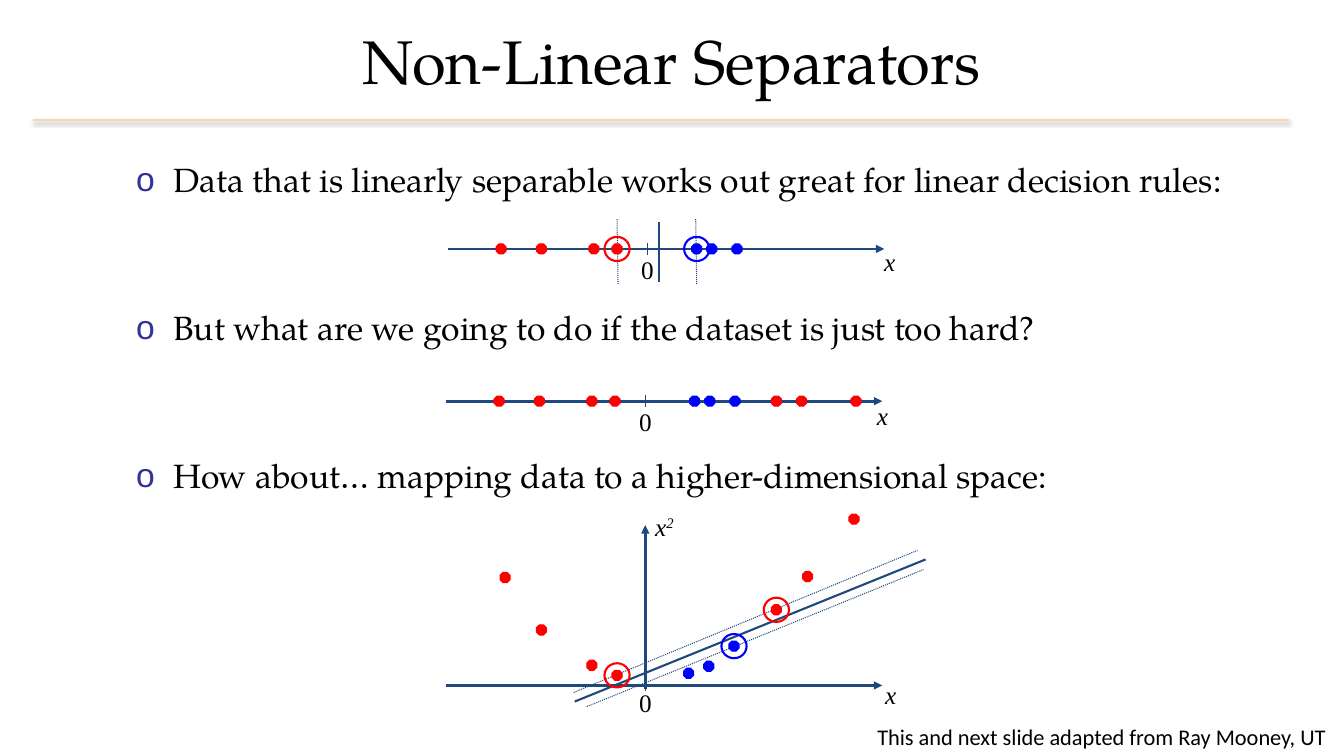
from dataclasses import dataclass

import pptx
import pptx.dml.color
import pptx.enum.dml
import pptx.enum.shapes
import pptx.enum.text
import pptx.oxml
import pptx.oxml.ns
import pptx.util

Inches = pptx.util.Inches
Pt = pptx.util.Pt
ALIGN = pptx.enum.text.PP_ALIGN
SHAPE = pptx.enum.shapes.MSO_SHAPE
DOTTED = pptx.enum.dml.MSO_LINE.ROUND_DOT
NS = pptx.oxml.ns.nsdecls("a")


@dataclass(frozen=True)
class Theme:
    ink: str = "000000"
    axis: str = "1F497D"
    red: str = "FF0000"
    blue: str = "0000FF"
    rule: str = "FCD5B5"
    bullet: str = "333399"
    heading_font: str = "TeX Gyre Pagella"
    math_font: str = "Times New Roman"
    credit_font: str = "Calibri"
    title_size: int = 44
    body_size: int = 24
    label_size: int = 18
    credit_size: int = 16
    thin: float = 0.75
    medium: float = 1.5
    thick: float = 2


THEME = Theme()

POINTS = [
    "Data that is linearly separable works out great for linear decision rules:",
    "But what are we going to do if the dataset is just too hard?",
    "How about… mapping data to a higher-dimensional space:",
]

# Samples as (x, height, is a support vector), in inches from the zero mark
RED_LEFT = [(-1.45, 0, False), (-1.05, 0, False), (-0.53, 0, False), (-0.3, 0, False)]
RED_RIGHT = [(1.3, 0, False), (1.55, 0, False), (2.09, 0, False)]
BLUE = [(0.49, 0, False), (0.64, 0, False), (0.89, 0, False)]
RED_MAPPED = [(-1.39, 1.07, False), (-1.03, 0.55, False), (-0.53, 0.2, False),
              (-0.28, 0.1, True), (1.3, 0.75, True), (1.61, 1.08, False),
              (2.07, 1.65, False)]
BLUE_MAPPED = [(0.43, 0.12, False), (0.63, 0.19, False), (0.88, 0.39, True)]


def rgb(color):
    return pptx.dml.color.RGBColor.from_string(color)


def apply(target, values):
    for name, value in values.items():
        setattr(target, name, value)


def write(paragraph, text, font, size, italic=False):
    run = paragraph.add_run()
    run.text = text
    apply(run.font, {"name": font, "size": Pt(size), "italic": italic, "bold": False})
    run.font.color.rgb = rgb(THEME.ink)
    return run


def place(shape, left, top, width, height):
    apply(shape, {"left": Inches(left), "top": Inches(top),
                  "width": Inches(width), "height": Inches(height)})


def add_label(slide, box, text, font=THEME.math_font, size=THEME.label_size,
              italic=False, align=ALIGN.LEFT):
    label = slide.shapes.add_textbox(*map(Inches, box))
    label.text_frame.word_wrap = True
    paragraph = label.text_frame.paragraphs[0]
    paragraph.alignment = align
    write(paragraph, text, font, size, italic)
    return paragraph


def add_line(slide, start, end, width, color=THEME.axis, dash=None, arrow=False, effect=""):
    line = slide.shapes.add_connector(pptx.enum.shapes.MSO_CONNECTOR.STRAIGHT,
                                      *map(Inches, (*start, *end)))
    line.line.color.rgb = rgb(color)
    apply(line.line, {"width": Pt(width), "dash_style": dash})
    if arrow:
        line.line._get_or_add_ln().append(
            pptx.oxml.parse_xml(f'<a:tailEnd {NS} type="triangle"/>'))
    line._element.spPr.append(
        pptx.oxml.parse_xml(f"<a:effectLst {NS}>{effect}</a:effectLst>"))


def add_mark(slide, kind, center, size, color, width, filled):
    across, high = size
    mark = slide.shapes.add_shape(kind, Inches(center[0] - across / 2),
                                  Inches(center[1] - high / 2), Inches(across), Inches(high))
    mark.shadow.inherit = False
    if filled:
        mark.fill.solid()
        mark.fill.fore_color.rgb = rgb(color)
    else:
        mark.fill.background()
    mark.line.color.rgb = rgb(color)
    mark.line.width = Pt(width)


def add_samples(slide, zero, samples, color):
    for x, height, support in samples:
        center = (zero[0] + x, zero[1] - height)
        add_mark(slide, SHAPE.OCTAGON, center, (0.1, 0.1), color, THEME.thin, True)
        if support:
            add_mark(slide, SHAPE.OVAL, center, (0.25, 0.24), color, THEME.medium, False)


def add_axis(slide, zero, name_at, zero_drop=0.0):
    x, y = zero
    add_line(slide, (x - 1.98, y), (x + 2.35, y), THEME.thick, arrow=True)
    add_line(slide, (x, y - 0.06), (x, y + 0.06), THEME.thin)
    add_label(slide, (x - 0.16, y + zero_drop, 0.37, 0.4), "0")
    add_label(slide, (*name_at, 0.5, 0.4), "x", italic=True)


def add_heading(slide):
    title = slide.shapes.title
    place(title, 0, -0.03, 13.33, 1.25)
    apply(title.text_frame, {"vertical_anchor": pptx.enum.text.MSO_ANCHOR.MIDDLE,
                             "auto_size": pptx.enum.text.MSO_AUTO_SIZE.NONE})
    heading = title.text_frame.paragraphs[0]
    heading.alignment = ALIGN.CENTER
    write(heading, "Non-Linear Separators", THEME.heading_font, THEME.title_size)
    add_line(slide, (0.33, 1.19), (12.78, 1.19), 1, THEME.rule, effect=(
        '<a:outerShdw blurRad="40000" dist="20000" dir="5400000" rotWithShape="0">'
        '<a:srgbClr val="000000"><a:alpha val="38000"/></a:srgbClr></a:outerShdw>'))


def add_points(slide):
    body = slide.placeholders[1]
    place(body, 1.25, 1.5, 11.67, 4.75)
    body.text_frame.auto_size = pptx.enum.text.MSO_AUTO_SIZE.NONE
    for index, text in enumerate(POINTS):
        point = body.text_frame.add_paragraph() if index else body.text_frame.paragraphs[0]
        apply(point, {"line_spacing": Pt(31), "space_before": Pt(74.7 if index else 0),
                      "space_after": Pt(0), "alignment": ALIGN.LEFT})
        props = point._p.get_or_add_pPr()
        props.set("marL", str(Inches(0.37)))
        props.set("indent", str(-Inches(0.37)))
        for bullet in (f'<a:buClr {NS}><a:srgbClr val="{THEME.bullet}"/></a:buClr>',
                       f'<a:buChar {NS} char="o"/>'):
            props.append(pptx.oxml.parse_xml(bullet))
        write(point, text, THEME.heading_font, THEME.body_size)


def add_separable_line(slide):
    zero = (6.42, 2.47)
    add_axis(slide, zero, (8.67, 2.39))
    add_line(slide, (6.54, 2.2), (6.54, 2.8), THEME.medium)
    for margin in (6.12, 6.9):
        add_line(slide, (margin + 0.01, 2.82), (margin, 2.17), THEME.thin, dash=DOTTED)
    # The innermost sample of each class is the support vector
    add_samples(slide, zero, RED_LEFT[:-1] + [(-0.3, 0, True)], THEME.red)
    add_samples(slide, zero, [(0.49, 0, True)] + BLUE[1:], THEME.blue)


def add_hard_line(slide):
    zero = (6.4, 3.98)
    add_axis(slide, zero, (8.6, 3.92))
    add_samples(slide, zero, RED_LEFT + RED_RIGHT, THEME.red)
    add_samples(slide, zero, BLUE, THEME.blue)


def add_mapped_plot(slide):
    zero = (6.4, 6.8)
    add_axis(slide, zero, (8.68, 6.69), zero_drop=-0.03)
    add_line(slide, (6.4, 6.84), (6.4, 5.21), THEME.thick, arrow=True)
    square = add_label(slide, (6.4, 5.02, 0.5, 0.4), "x", italic=True)
    power = write(square, "2", THEME.math_font, THEME.label_size, italic=True)
    power._r.get_or_add_rPr().set("baseline", "30000")
    # Separator and its margins
    add_line(slide, (5.7, 6.96), (9.18, 5.55), THEME.medium)
    add_line(slide, (5.69, 6.87), (9.1, 5.46), THEME.thin, dash=DOTTED)
    add_line(slide, (5.82, 7.01), (9.16, 5.65), THEME.thin, dash=DOTTED)
    add_samples(slide, zero, RED_MAPPED, THEME.red)
    add_samples(slide, zero, BLUE_MAPPED, THEME.blue)


def main():
    deck = pptx.Presentation()
    apply(deck, {"slide_width": Inches(13.33), "slide_height": Inches(7.5)})
    slide = deck.slides.add_slide(deck.slide_layouts[1])
    add_heading(slide)
    add_points(slide)
    add_separable_line(slide)
    add_hard_line(slide)
    add_mapped_plot(slide)
    add_label(slide, (7.5, 7.13, 5.75, 0.36), "This and next slide adapted from Ray Mooney, UT",
              THEME.credit_font, THEME.credit_size, align=ALIGN.RIGHT)
    deck.save("out.pptx")


if __name__ == "__main__":
    main()
